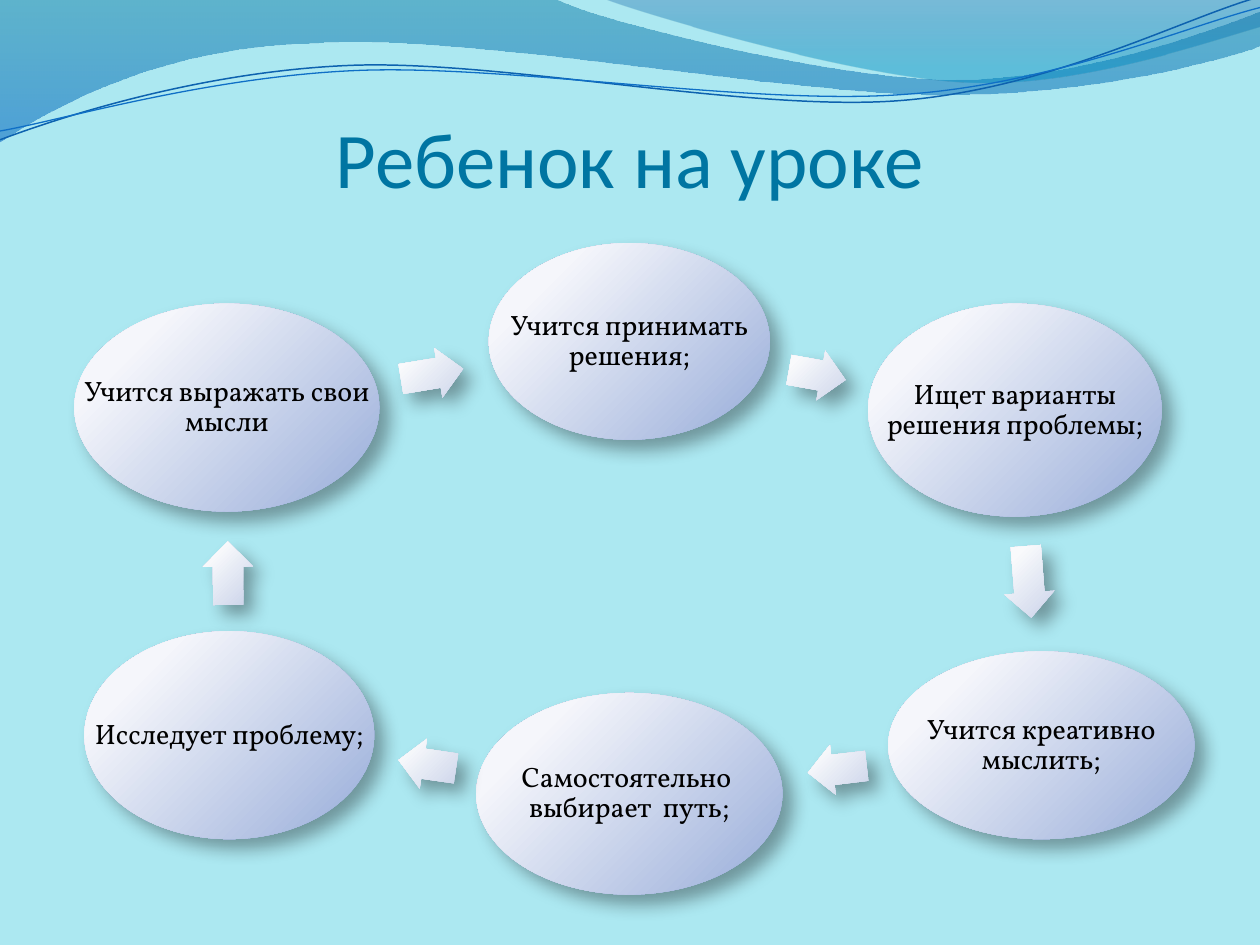
from dataclasses import dataclass
from math import atan2, cos, degrees, hypot, sin

from lxml.etree import SubElement
from pptx import Presentation
from pptx.dml.color import RGBColor
from pptx.enum.shapes import MSO_SHAPE as Preset
from pptx.enum.text import MSO_ANCHOR as Anchor, PP_ALIGN as Align
from pptx.oxml.ns import qn
from pptx.util import Inches, Pt

COLUMNS, ROWS = 100, 75
CELL = Inches(10) / COLUMNS
ARROW_START, ARROW_SHARE, ARROW_HEIGHT = 0.22, 0.53, 4
NODE_STOPS = [(20, "F5F6FB", 100), (100, "97ACD9", 100)]
ARROW_STOPS = [(20, "F9FAFC", 100), (100, "C9D2E9", 100)]

# Node boxes in cells from the ring's corner, clockwise from the top
NODES = [
    ("Учится принимать решения;", 32.9, 0, 22.3, 15.6),
    ("Ищет варианты решения проблемы;", 63, 4.8, 23.3, 16.9),
    ("Учится креативно мыслить;", 64.6, 32.4, 24.3, 14.9),
    ("Самостоятельно  выбирает  путь;", 31.9, 35.7, 24.3, 16),
    ("Исследует проблему;", 0.8, 30.8, 23, 16.5),
    ("Учится выражать свои мысли", 0, 4.8, 24.2, 16.5),
]

# Wave outlines in cells: a pair is a straight step, six numbers a curve
BROAD_WAVE = [
    (0, 0), (44, -0.1), (47.6, 1.7, 66.4, 6.3, 75.8, 6.3),
    (85.3, 6.3, 95.8, 2.6, 100, 0.9), (100.1, 3.6),
    (98.3, 4.4, 87, 7.6, 74.6, 7.5), (62.2, 7.5, 38.2, 2.8, 25.7, 3.4),
    (12.9, 3.6, 4.6, 8.3, -0.1, 11.3),
]
CORNER_WAVE = [
    (47.9, -0.1), (50.9, 1.1, 68.2, 6.2, 76.9, 6.5),
    (85.6, 6.9, 96.1, 3.2, 100, 2.1), (100, 0),
]
DARK_LINE = [
    (0, 11.1), (4.8, 9.3, 15.8, 5.7, 27.7, 5.2),
    (39.5, 4.7, 59.3, 8.9, 71.3, 8), (83.3, 7.1, 93.8, 1.5, 99.8, -0.2),
]
LIGHT_LINE = [
    (0, 10.4), (4.7, 9.6, 16.4, 6.1, 28.3, 5.6),
    (40.3, 5.1, 59.7, 8.4, 71.7, 7.5), (83.6, 6.7, 94.1, 2.1, 100, 0.6),
]


@dataclass
class Box:
    left: float
    top: float
    width: float
    height: float

    def center(self):
        return self.left + self.width / 2, self.top + self.height / 2

    def emu(self):
        return [round(v * CELL) for v in (self.left, self.top, self.width, self.height)]


def color(value):
    return RGBColor.from_string(value)


def add_color(parent, value, opacity):
    tag = SubElement(parent, qn("a:srgbClr"), val=value)
    if opacity < 100:
        SubElement(tag, qn("a:alpha"), val=str(opacity * 1000))


def fill_gradient(shape, stops, radial=False):
    shape.fill.gradient()
    grad = shape.fill._xPr.find(qn("a:gradFill"))
    for child in list(grad):
        grad.remove(child)
    stop_list = SubElement(grad, qn("a:gsLst"))
    for position, value, opacity in stops:
        stop = SubElement(stop_list, qn("a:gs"), pos=str(position * 1000))
        add_color(stop, value, opacity)
    if radial:
        circle = SubElement(grad, qn("a:path"), {"path": "circle"})
        SubElement(circle, qn("a:fillToRect"), l="-15000", t="-15000", r="115000", b="115000")
    else:
        SubElement(grad, qn("a:lin"), ang="5400000", scaled="1")


def add_shadow(shape):
    shape.shadow.inherit = False
    effects = shape._element.spPr.find(qn("a:effectLst"))
    shadow = SubElement(effects, qn("a:outerShdw"), blurRad=str(Pt(10.2)),
                        dist=str(Pt(8)), dir="2700000", algn="tl", rotWithShape="0")
    add_color(shadow, "000000", 35)


def add_text(page, box, text, font, size, fill, anchor, margins):
    frame = page.shapes.add_textbox(*box.emu()).text_frame
    frame.word_wrap = True
    frame.vertical_anchor = anchor
    side, top, bottom = map(Inches, margins)
    frame.margin_left = frame.margin_right = side
    frame.margin_top, frame.margin_bottom = top, bottom
    para = frame.paragraphs[0]
    para.alignment = Align.CENTER
    span = para.add_run()
    span.text = text
    span.font.name, span.font.size = font, Pt(size)
    span.font.color.rgb = color(fill)
    return para


def add_outline(page, box, steps, close):
    """Join the steps' end points, then bend the curved steps."""
    def place(x, y):
        return round((box.left + x) * CELL), round((box.top + y) * CELL)

    ends = [place(*step[-2:]) for step in steps]
    builder = page.shapes.build_freeform(*ends[0], scale=1.0)
    builder.add_line_segments(ends[1:], close=close)
    shape = builder.convert_to_shape()
    shape.shadow.inherit = False
    segments = list(shape._element.iter(qn("a:lnTo")))
    for segment, step in zip(segments, steps[1:]):
        if len(step) == 2:
            continue
        curve = segment.makeelement(qn("a:cubicBezTo"))
        for pair in (step[:2], step[2:4], step[4:]):
            x, y = place(*pair)
            SubElement(curve, qn("a:pt"), x=str(x - shape.left), y=str(y - shape.top))
        segment.getparent().replace(segment, curve)
    return shape


def add_waves(page, box):
    # Translucent bands
    for steps, stops in (
        (BROAD_WAVE, [(0, "0074A1", 45), (100, "0065C1", 55)]),
        (CORNER_WAVE, [(0, "00539E", 30), (80, "008BBF", 45)]),
    ):
        band = add_outline(page, box, steps, True)
        fill_gradient(band, stops)
        band.line.fill.background()
    # Thin lines
    for steps, value, width in ((DARK_LINE, "0D62AF", 0.85), (LIGHT_LINE, "0F6FC6", 0.75)):
        line = add_outline(page, box, steps, False)
        line.fill.background()
        line.line.color.rgb = color(value)
        line.line.width = Pt(width)


def add_glossy(page, preset, box, stops):
    shape = page.shapes.add_shape(preset, *box.emu())
    fill_gradient(shape, stops, radial=True)
    shape.line.fill.background()
    add_shadow(shape)
    return shape


def add_node(page, box, text):
    add_glossy(page, Preset.OVAL, box, NODE_STOPS)
    para = add_text(page, box, text, "Vollkorn", 16, "000000", Anchor.MIDDLE,
                    (0.02, 0.02, 0.02))
    para.line_spacing = 0.9


def add_arrow(page, start, end):
    """Set an arrow in the gap between two ellipses."""
    (x1, y1), (x2, y2) = start.center(), end.center()
    angle, distance = atan2(y2 - y1, x2 - x1), hypot(x2 - x1, y2 - y1)
    near, far = (1 / hypot(2 * cos(angle) / b.width, 2 * sin(angle) / b.height)
                 for b in (start, end))
    gap = distance - near - far
    length = ARROW_SHARE * gap
    middle = near + ARROW_START * gap + length / 2
    box = Box(x1 + middle * cos(angle) - length / 2,
              y1 + middle * sin(angle) - ARROW_HEIGHT / 2, length, ARROW_HEIGHT)
    arrow = add_glossy(page, Preset.RIGHT_ARROW, box, ARROW_STOPS)
    arrow.adjustments[0], arrow.adjustments[1] = 0.6, 0.5
    arrow.rotation = degrees(angle) % 360


def add_ring(page, box):
    nodes = [Box(box.left + x, box.top + y, w, h) for _, x, y, w, h in NODES]
    for i, node in enumerate(nodes):
        add_node(page, node, NODES[i][0])
        add_arrow(page, node, nodes[(i + 1) % len(nodes)])


def main():
    deck = Presentation()
    deck.slide_width, deck.slide_height = round(COLUMNS * CELL), round(ROWS * CELL)
    page = deck.slides.add_slide(deck.slide_layouts[6])
    page.background.fill.solid()
    page.background.fill.fore_color.rgb = color("ACE8F1")
    add_waves(page, Box(0, 0, COLUMNS, 11.3))
    add_text(page, Box(5, 7.7, 90, 8.5), "Ребенок на уроке", "Calibri", 45,
             "0075A2", Anchor.BOTTOM, (0, 0.05, 0))
    add_ring(page, Box(5.9, 19.3, 88.9, 51.7))
    deck.save("out.pptx")


if __name__ == "__main__":
    main()
